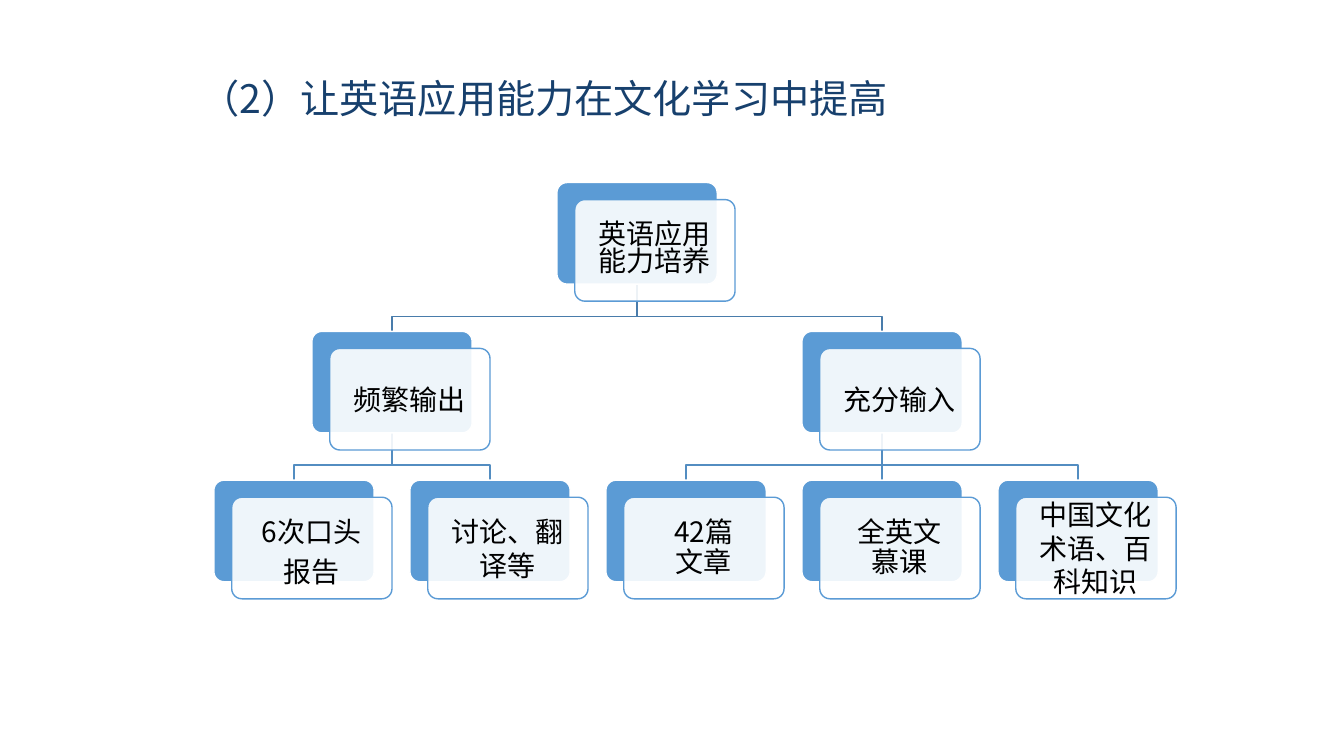
from lxml.etree import SubElement
from pptx import Presentation
from pptx.dml.color import RGBColor
from pptx.enum.shapes import MSO_CONNECTOR, MSO_SHAPE
from pptx.enum.text import MSO_ANCHOR, MSO_AUTO_SIZE, PP_ALIGN
from pptx.oxml.ns import qn
from pptx.util import Cm, Pt

TITLE = "（2）让英语应用能力在文化学习中提高"
ROOT = (["英语应用能力培养"], 19.3)
BRANCHES = [
    (["频繁输出"], 24, [
        (["6次口头", "报告"], 28.6),
        (["讨论、翻译等"], 24),
    ]),
    (["充分输入"], 24, [
        (["42篇", "文章"], 21.4),
        (["全英文", "慕课"], 21.4),
        (["中国文化术语、百科知识"], 24),
    ]),
]

FONT = "Noto Sans CJK SC"
NAVY = RGBColor(0x17, 0x40, 0x6D)
BLUE = RGBColor(0x5B, 0x9B, 0xD5)
UPPER_LINE = RGBColor(0x49, 0x7C, 0xAB)
LOWER_LINE = RGBColor(0x53, 0x8D, 0xC1)
WHITE = RGBColor(0xFF, 0xFF, 0xFF)
BLACK = RGBColor(0, 0, 0)

CARD_WIDTH, CARD_HEIGHT = 4.04, 2.56
SHIFT_X, SHIFT_Y = 0.45, 0.43
FIRST_CENTER, LEAF_PITCH = 7.41, 4.94
LEVEL_TOPS = [4.6 + 3.75 * level for level in range(3)]
ELBOW_RISE = 0.38
FRAME_FORMAT = {"word_wrap": True, "auto_size": MSO_AUTO_SIZE.NONE,
                "vertical_anchor": MSO_ANCHOR.MIDDLE}


def apply_format(target, values):
    """Set each named attribute on the target."""
    for name, value in values.items():
        setattr(target, name, value)


def write_paragraph(paragraph, text, size, color, layout):
    """Write one formatted run into a paragraph."""
    apply_format(paragraph, layout)
    run = paragraph.add_run()
    run.text = text
    apply_format(run.font, {"name": FONT, "size": Pt(size), "bold": False})
    run.font.color.rgb = color
    SubElement(run._r.get_or_add_rPr(), qn("a:ea")).set("typeface", FONT)


def add_title(slide):
    """Place and fill the slide title."""
    title = slide.shapes.title
    apply_format(title, {"left": Cm(4.8), "top": Cm(1.73),
                         "width": Cm(23.93), "height": Cm(1.45)})
    apply_format(title.text_frame, FRAME_FORMAT)
    write_paragraph(title.text_frame.paragraphs[0], TITLE, 28, NAVY,
                    {"alignment": PP_ALIGN.LEFT})


def add_branch_line(slide, parent, child, level, color):
    """Link a parent centre to a child centre one level below."""
    start = LEVEL_TOPS[level] + CARD_HEIGHT
    end = LEVEL_TOPS[level + 1]
    if abs(parent - child) < 0.01:
        link = slide.shapes.add_connector(
            MSO_CONNECTOR.STRAIGHT, Cm(parent), Cm(start), Cm(parent), Cm(end))
        SubElement(link._element.spPr, qn("a:effectLst"))
    else:
        bend = end - ELBOW_RISE
        builder = slide.shapes.build_freeform(Cm(parent), Cm(start))
        corners = [(parent, bend), (child, bend), (child, end)]
        builder.add_line_segments([(Cm(x), Cm(y)) for x, y in corners], close=False)
        link = builder.convert_to_shape()
        link.fill.background()
        link.shadow.inherit = False
    link.line.color.rgb = color
    link.line.width = Pt(1)


def add_panel(slide, left, top, fill, outline):
    """Add one rounded panel of a card."""
    panel = slide.shapes.add_shape(MSO_SHAPE.ROUNDED_RECTANGLE, Cm(left), Cm(top),
                                   Cm(CARD_WIDTH), Cm(CARD_HEIGHT))
    panel.adjustments[0] = 0.1
    panel.shadow.inherit = False
    panel.fill.solid()
    panel.fill.fore_color.rgb = fill
    panel.line.color.rgb = outline
    panel.line.width = Pt(1)
    return panel


def add_card(slide, center, level, lines, line_height):
    """Add a blue panel and its translucent text panel."""
    left, top = center - CARD_WIDTH / 2, LEVEL_TOPS[level]
    add_panel(slide, left, top, BLUE, WHITE)
    front = add_panel(slide, left + SHIFT_X, top + SHIFT_Y, WHITE, BLUE)
    color = front._element.spPr.find(qn("a:solidFill"))[0]
    SubElement(color, qn("a:alpha")).set("val", "90000")
    frame = front.text_frame
    apply_format(frame, FRAME_FORMAT)
    apply_format(frame, {f"margin_{side}": Cm(0.28)
                         for side in ("left", "right", "top", "bottom")})
    for index, text in enumerate(lines):
        paragraph = frame.add_paragraph() if index else frame.paragraphs[0]
        write_paragraph(paragraph, text, 20, BLACK,
                        {"alignment": PP_ALIGN.CENTER, "line_spacing": Pt(line_height)})


def main():
    """Build the slide with its title and ability tree."""
    presentation = Presentation()
    apply_format(presentation, {"slide_width": Cm(33.87), "slide_height": Cm(19.05)})
    slide = presentation.slides.add_slide(presentation.slide_layouts[5])
    add_title(slide)

    cards, links, branch_centers = [], [], []
    leaf_center = FIRST_CENTER
    for lines, line_height, leaves in BRANCHES:
        centers = [leaf_center + LEAF_PITCH * index for index in range(len(leaves))]
        leaf_center += LEAF_PITCH * len(leaves)
        middle = (centers[0] + centers[-1]) / 2
        branch_centers.append(middle)
        cards.append((middle, 1, lines, line_height))
        cards += [(center, 2, *leaf) for center, leaf in zip(centers, leaves)]
        links += [(middle, center, 1, LOWER_LINE) for center in centers]
    root_center = sum(branch_centers) / len(branch_centers)
    cards.insert(0, (root_center, 0, *ROOT))
    links += [(root_center, center, 0, UPPER_LINE) for center in branch_centers]

    for link in links:
        add_branch_line(slide, *link)
    for card in cards:
        add_card(slide, *card)
    presentation.save("out.pptx")


if __name__ == "__main__":
    main()
